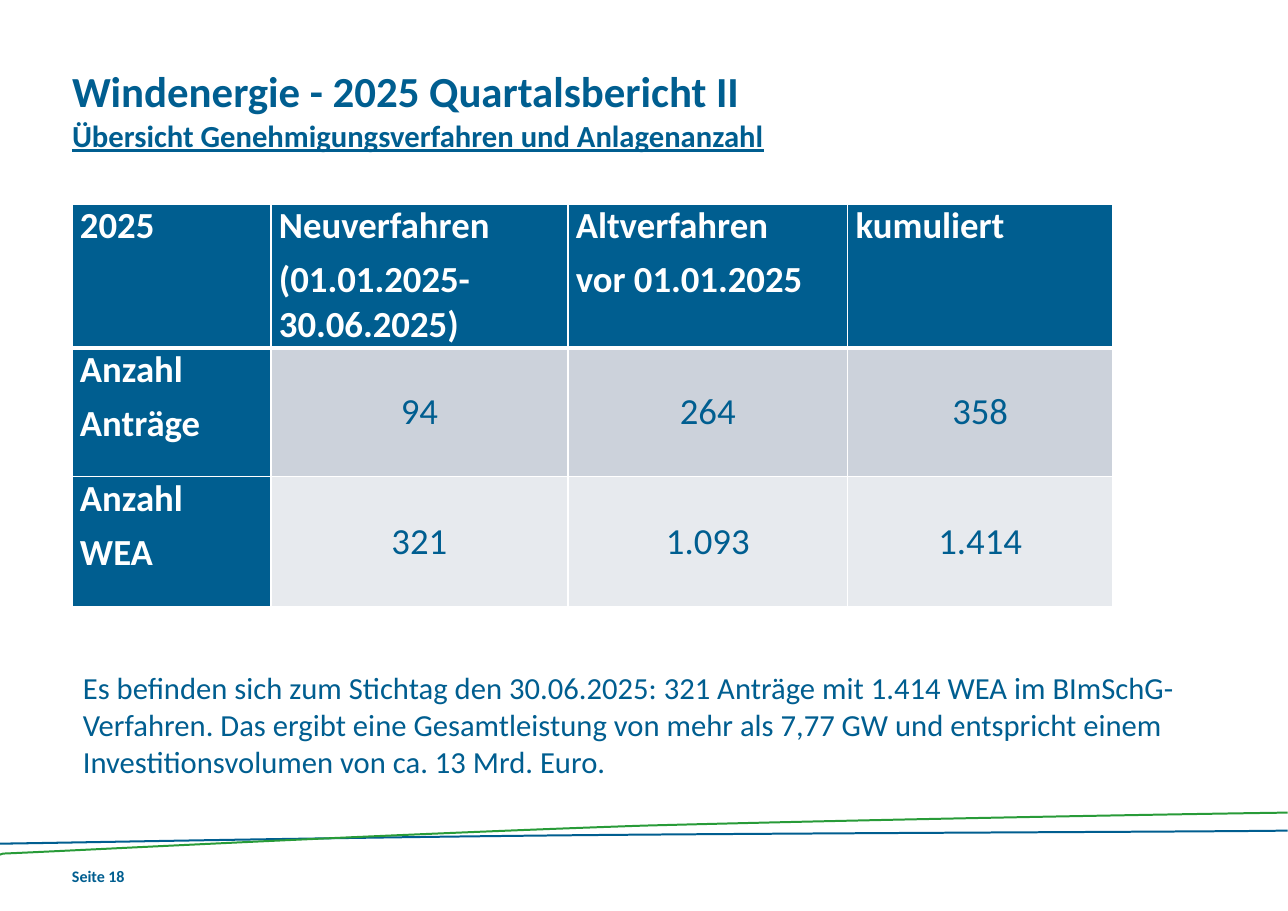
from dataclasses import dataclass

from lxml import etree
from pptx import Presentation, util as u
from pptx.dml.color import RGBColor
from pptx.enum import text as t
from pptx.oxml.ns import qn

EMU_PER_PX = 914400 / 110.2
FONT = "Calibri"
COLORS = {
    "blue": "005E90",
    "green": "289B38",
    "white": "FFFFFF",
    "band_dark": "CCD2DB",
    "band_light": "E7EAEE",
}
COLUMN_WIDTHS = (199, 297, 280, 265)
ROW_HEIGHTS = (144, 129, 130)
ROW_FILLS = ("blue", "band_dark", "band_light")
TABLE_ROWS = (
    ("2025", "Neuverfahren\n(01.01.2025-30.06.2025)",
     "Altverfahren\nvor 01.01.2025", "kumuliert"),
    ("Anzahl\nAnträge", "94", "264", "358"),
    ("Anzahl\nWEA", "321", "1.093", "1.414"),
)
WAVE_X = (1288, 1285, 1211, 909, 644, 376, 77, 3, 0)
WAVE_THICKNESS = 2
CURVE_STARTS = (2, 5, 11, 14)


@dataclass(frozen=True)
class Wave:
    color: str
    heights: tuple[int, ...]


@dataclass(frozen=True)
class Box:
    left: int
    top: int
    width: int
    height: int

    def emu(self) -> tuple[int, ...]:
        return tuple(px(v) for v in (self.left, self.top, self.width, self.height))


WAVES = (
    Wave("blue", (830, 830, 831, 832, 834, 836, 842, 843, 843)),
    Wave("green", (812, 812, 813, 818, 825, 834, 850, 853, 854)),
)
TITLE_BOX = Box(72, 65, 954, 117)
TABLE_BOX = Box(72, 204, sum(COLUMN_WIDTHS), sum(ROW_HEIGHTS))
SUMMARY_BOX = Box(72, 664, 1154, 122)
PAGE_BOX = Box(72, 867, 78, 28)


def px(value: float) -> u.Emu:
    return u.Emu(round(value * EMU_PER_PX))


def color(name: str) -> RGBColor:
    return RGBColor.from_string(COLORS[name])


def add_run(paragraph, text, *, size, color_name="blue", bold=False, underline=False):
    run = paragraph.add_run()
    run.text = text
    run.font.name = FONT
    run.font.size = u.Pt(size)
    run.font.bold = bold
    run.font.underline = underline
    run.font.color.rgb = color(color_name)


def set_insets(frame, inset: int = 0) -> None:
    frame.margin_left = frame.margin_right = px(inset)
    frame.margin_top = frame.margin_bottom = 0


def bend_segments(shape) -> None:
    segments = list(shape._element.iter(qn("a:lnTo")))
    for start in CURVE_STARTS:
        curve = etree.Element(qn("a:cubicBezTo"))
        segments[start].addprevious(curve)
        for segment in segments[start:start + 3]:
            curve.append(segment[0])
            segment.getparent().remove(segment)


def add_wave(slide, wave: Wave) -> None:
    upper = list(zip(WAVE_X, wave.heights))
    lower = [(x, y + WAVE_THICKNESS) for x, y in upper]
    points = upper[:1] + lower + upper[:0:-1]
    outline = [(px(x), px(y)) for x, y in points]
    builder = slide.shapes.build_freeform(*outline[0])
    builder.add_line_segments(outline[1:], close=True)
    shape = builder.convert_to_shape()
    bend_segments(shape)
    shape.shadow.inherit = False
    shape.fill.solid()
    shape.fill.fore_color.rgb = color(wave.color)
    shape.line.fill.background()


def add_title(slide) -> None:
    title = slide.shapes.title
    title.left, title.top, title.width, title.height = TITLE_BOX.emu()
    frame = title.text_frame
    set_insets(frame)
    frame.word_wrap = True
    frame.auto_size = t.MSO_AUTO_SIZE.NONE
    frame.vertical_anchor = t.MSO_ANCHOR.TOP
    paragraph = frame.paragraphs[0]
    paragraph.alignment = t.PP_ALIGN.LEFT
    add_run(paragraph, "Windenergie - 2025 Quartalsbericht II", size=28, bold=True)
    paragraph.add_line_break()
    add_run(paragraph, "Übersicht Genehmigungsverfahren und Anlagenanzahl",
            size=20, bold=True, underline=True)


def set_header_borders(cell) -> None:
    properties = cell._tc.get_or_add_tcPr()
    widths = {"a:lnL": 1, "a:lnR": 1, "a:lnT": 1, "a:lnB": 3}
    for index, (tag, width) in enumerate(widths.items()):
        line = etree.Element(qn(tag), w=str(u.Pt(width)))
        fill = etree.SubElement(line, qn("a:solidFill"))
        etree.SubElement(fill, qn("a:srgbClr"), val=COLORS["white"])
        properties.insert(index, line)


def format_cell(cell, text: str, fill_name: str, heading: bool) -> None:
    cell.fill.solid()
    cell.fill.fore_color.rgb = color(fill_name)
    set_insets(cell, 8)
    cell.vertical_anchor = t.MSO_ANCHOR.TOP if heading else t.MSO_ANCHOR.MIDDLE
    frame = cell.text_frame
    for index, line in enumerate(text.split("\n")):
        paragraph = frame.add_paragraph() if index else frame.paragraphs[0]
        paragraph.alignment = t.PP_ALIGN.JUSTIFY if heading else t.PP_ALIGN.CENTER
        paragraph.space_after = u.Pt(6)
        add_run(paragraph, line, size=24, bold=heading,
                color_name="white" if heading else "blue")


def add_overview_table(slide) -> None:
    table = slide.shapes.add_table(
        len(ROW_HEIGHTS), len(COLUMN_WIDTHS), *TABLE_BOX.emu()).table
    table.first_col = True
    for column, width in zip(table.columns, COLUMN_WIDTHS):
        column.width = px(width)
    for row_index, texts in enumerate(TABLE_ROWS):
        table.rows[row_index].height = px(ROW_HEIGHTS[row_index])
        for column_index, text in enumerate(texts):
            cell = table.cell(row_index, column_index)
            heading = row_index == 0 or column_index == 0
            format_cell(cell, text, "blue" if heading else ROW_FILLS[row_index], heading)
            if row_index == 0:
                set_header_borders(cell)


def add_label(slide, box: Box, text: str, *, size: float, bold=False, wrap=True):
    frame = slide.shapes.add_textbox(*box.emu()).text_frame
    frame.word_wrap = wrap
    add_run(frame.paragraphs[0], text, size=size, bold=bold)
    return frame


def main() -> None:
    presentation = Presentation()
    presentation.slide_width = u.Inches(11.69)
    presentation.slide_height = u.Inches(8.27)
    slide = presentation.slides.add_slide(presentation.slide_layouts[5])
    set_insets(add_label(slide, PAGE_BOX, "Seite 18", size=10.5, bold=True, wrap=False))
    for wave in WAVES:
        add_wave(slide, wave)
    add_title(slide)
    add_overview_table(slide)
    add_label(
        slide, SUMMARY_BOX,
        "Es befinden sich zum Stichtag den 30.06.2025: 321 Anträge mit 1.414 WEA "
        "im BImSchG-Verfahren. Das ergibt eine Gesamtleistung von mehr als 7,77 GW "
        "und entspricht einem Investitionsvolumen von ca. 13 Mrd. Euro.", size=20)
    presentation.save("out.pptx")


if __name__ == "__main__":
    main()
